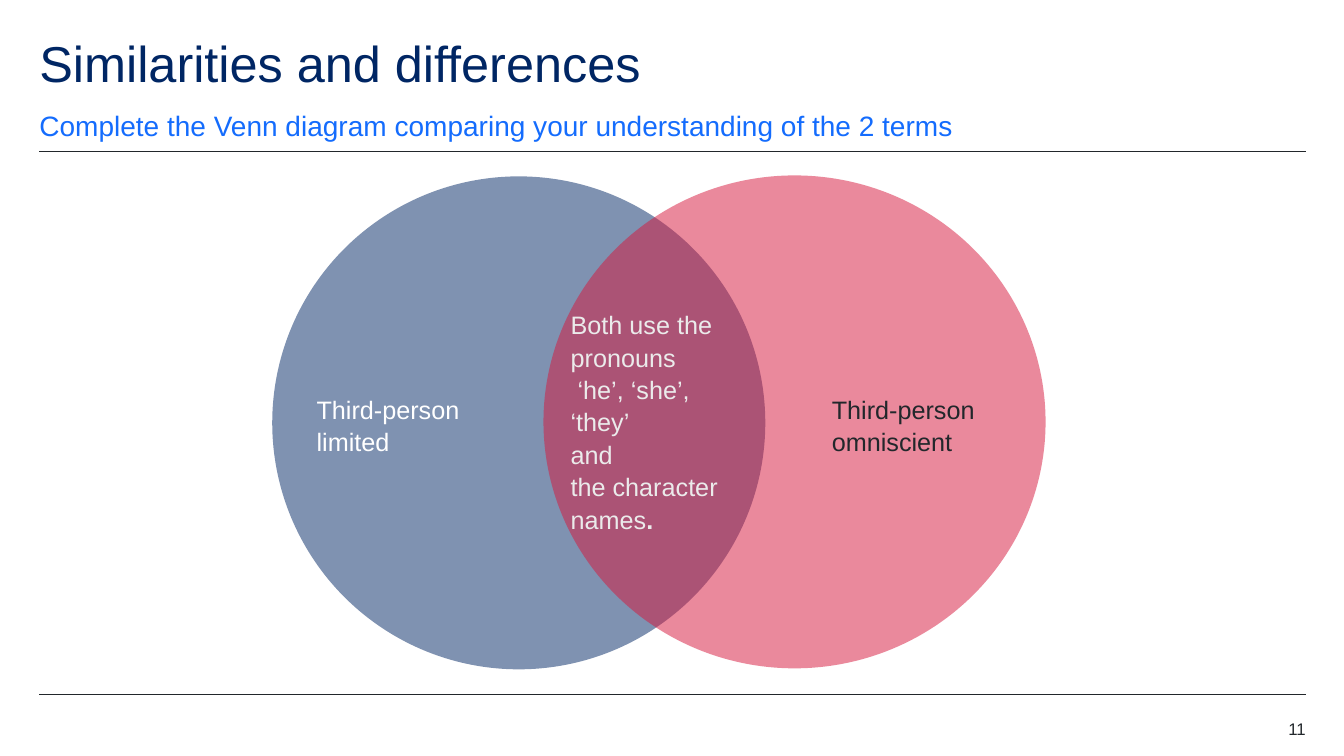
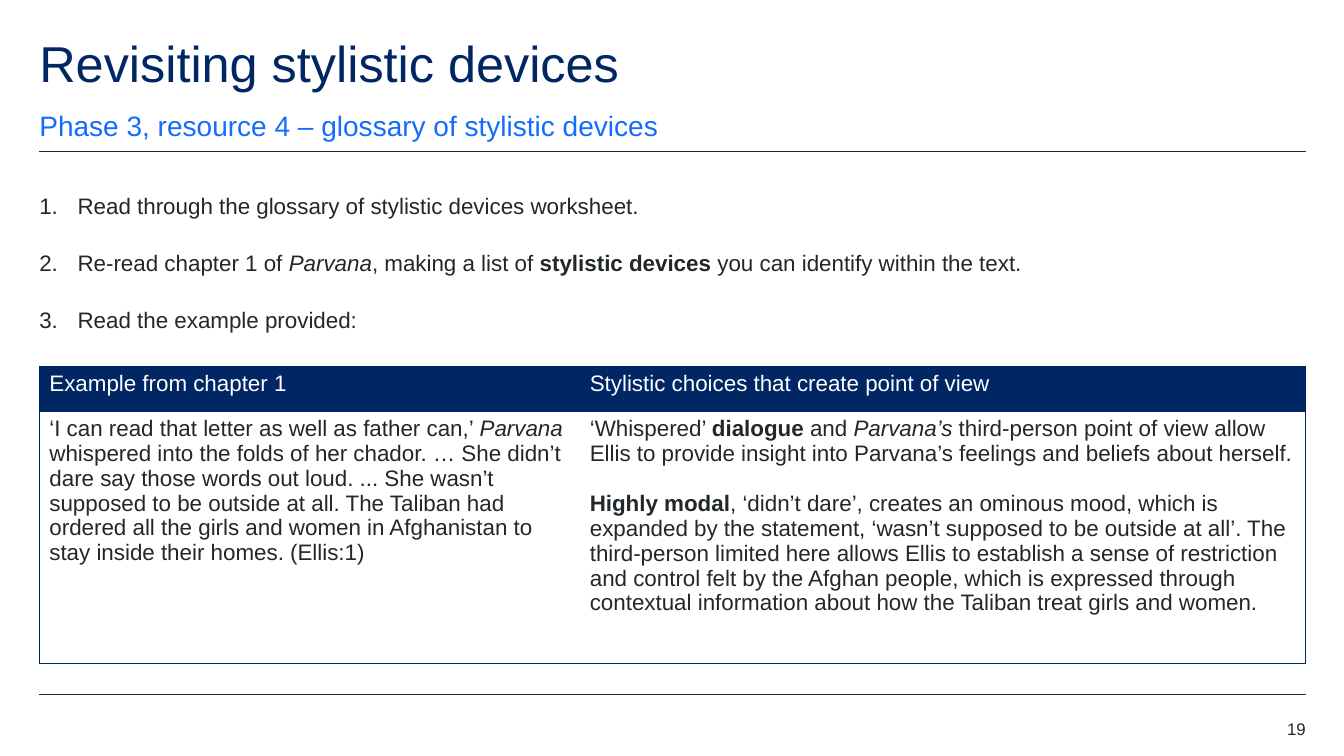
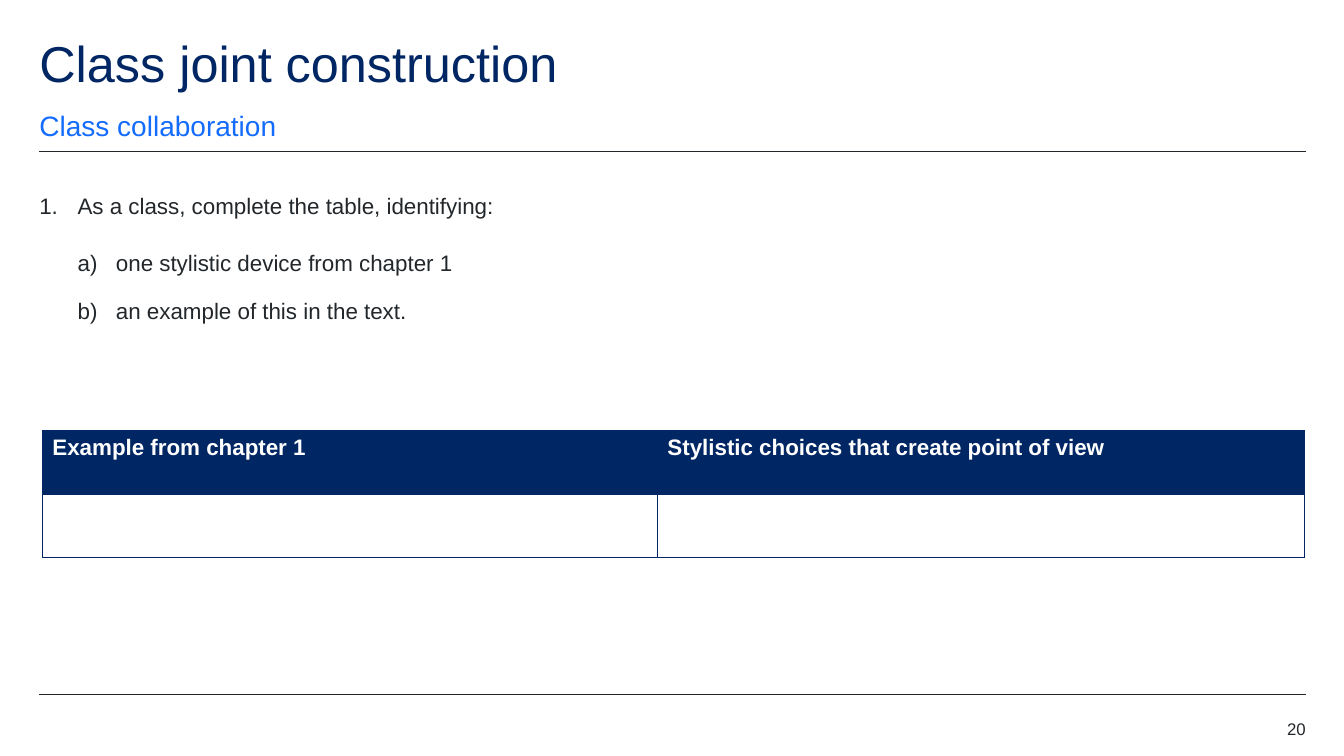
from lxml import etree
from pptx import Presentation
from pptx.dml.color import RGBColor
from pptx.enum.shapes import MSO_CONNECTOR, MSO_SHAPE
from pptx.enum.text import MSO_ANCHOR, PP_ALIGN
from pptx.oxml.ns import qn
from pptx.util import Inches, Pt

STRAIGHT = MSO_CONNECTOR.STRAIGHT
OVAL = MSO_SHAPE.OVAL
TOP, MIDDLE, BOTTOM = MSO_ANCHOR.TOP, MSO_ANCHOR.MIDDLE, MSO_ANCHOR.BOTTOM
RIGHT = PP_ALIGN.RIGHT

# Shared style
FONT = "Arial"
NAVY = RGBColor(0x00, 0x26, 0x64)
BLUE = RGBColor(0x14, 0x6C, 0xFD)
RED = RGBColor(0xD7, 0x15, 0x3A)
INK = RGBColor(0x22, 0x27, 0x2B)
PALE = RGBColor(0xEB, 0xEB, 0xEB)
WHITE = RGBColor(0xFF, 0xFF, 0xFF)

# Shared layout, in inches
MARGIN = 0.39
CONTENT_WIDTH = 12.56
RIGHT_EDGE = MARGIN + CONTENT_WIDTH
HEADING_WIDTH = 11.02
RULES = (1.5, 6.89)
LIST_TOP = 1.77
INDENT = 0.38
VENN_SPACING = 1.07
BORDER_TAGS = {"l": "a:lnL", "r": "a:lnR", "t": "a:lnT", "b": "a:lnB"}


def set_font(para, size, color, bold=None):
    font = para.font
    font.name, font.size, font.bold = FONT, Pt(size), bold
    font.color.rgb = color


def add_spans(para, spans):
    """Spans are a plain string, or (text, style) pairs with style "", "b" or "i"."""
    if isinstance(spans, str):
        spans = [(spans, "")]
    for text, style in spans:
        span = para.add_run()
        span.text = text
        if style == "b":
            span.font.bold = True
        elif style == "i":
            span.font.italic = True


def add_numbering(para, scheme, level):
    para.level = level
    properties = para._p.get_or_add_pPr()
    properties.set("marL", str(Inches(INDENT * (level + 1))))
    properties.set("indent", str(-Inches(INDENT)))
    etree.SubElement(properties, qn("a:buFont"), typeface="+mj-lt")
    etree.SubElement(properties, qn("a:buAutoNum"), type=scheme)


def add_text(page, place, paragraphs, size, color, anchor=TOP, align=None,
             spacing=None, wrap=True):
    box = page.shapes.add_textbox(*map(Inches, place))
    frame = box.text_frame
    frame.word_wrap, frame.vertical_anchor = wrap, anchor
    frame.margin_left = frame.margin_right = 0
    frame.margin_top = frame.margin_bottom = 0
    for index, spans in enumerate(paragraphs):
        para = frame.paragraphs[0] if index == 0 else frame.add_paragraph()
        para.alignment, para.line_spacing = align, spacing
        set_font(para, size, color)
        add_spans(para, spans)


def add_list(page, height, items):
    """Items are (level, spans): level 0 is 1. 2. 3., level 1 is a) b) c)."""
    box = page.shapes.add_textbox(*map(Inches, (MARGIN, LIST_TOP, CONTENT_WIDTH, height)))
    frame = box.text_frame
    frame.word_wrap = True
    frame.margin_left = frame.margin_right = 0
    frame.margin_top = frame.margin_bottom = 0
    for index, (level, spans) in enumerate(items):
        para = frame.paragraphs[0] if index == 0 else frame.add_paragraph()
        para.line_spacing = 1.5
        para.space_after = Pt((12, 6)[level])
        add_numbering(para, ("arabicPeriod", "alphaLcParenR")[level], level)
        set_font(para, 16, INK)
        add_spans(para, spans)


def add_rule(page, top):
    rule = page.shapes.add_connector(
        STRAIGHT, Inches(MARGIN), Inches(top), Inches(RIGHT_EDGE), Inches(top))
    rule.line.color.rgb, rule.line.width = INK, Pt(0.5)
    etree.SubElement(rule._element.spPr, qn("a:effectLst"))


def add_page(deck, title, subtitle, number):
    page = deck.slides.add_slide(deck.slide_layouts[6])
    for top in RULES:
        add_rule(page, top)
    add_text(page, (12.16, 7.13, 0.79, 0.2), [number], 12, INK, align=RIGHT)
    add_text(page, (MARGIN, 1.07, HEADING_WIDTH, 0.34), [subtitle], 20, BLUE,
             anchor=BOTTOM, spacing=1.5)
    add_text(page, (MARGIN, 0.39, HEADING_WIDTH, 0.6), [title], 36, NAVY, spacing=0.9)
    return page


def add_circle(page, place, color):
    circle = page.shapes.add_shape(OVAL, *map(Inches, place))
    circle.shadow.inherit = False
    circle.fill.solid()
    circle.fill.fore_color.rgb = color
    circle.line.fill.background()
    tint = circle._element.spPr.find(".//" + qn("a:srgbClr"))
    etree.SubElement(tint, qn("a:alpha"), val="50000")


def set_borders(cell, sides):
    """Draw the named sides and clear the others; borders go before the fill."""
    properties = cell._tc.get_or_add_tcPr()
    for index, (side, tag) in enumerate(BORDER_TAGS.items()):
        border = etree.Element(qn(tag), w=str(Pt(0.5)))
        if side in sides:
            paint = etree.SubElement(border, qn("a:solidFill"))
            etree.SubElement(paint, qn("a:srgbClr"), val=str(NAVY))
        else:
            etree.SubElement(border, qn("a:noFill"))
        properties.insert(index, border)


def add_table(page, left, top, widths, heights, rows, borders, bold_header=None):
    """Each cell is a list of paragraphs; borders holds the sides to draw per cell."""
    frame = page.shapes.add_table(
        len(rows), len(widths),
        *map(Inches, (left, top, sum(widths), sum(heights))))
    table = frame.table
    for column, width in zip(table.columns, widths):
        column.width = Inches(width)
    for row, height in zip(table.rows, heights):
        row.height = Inches(height)
    for r, row in enumerate(rows):
        header = r == 0
        for c, paragraphs in enumerate(row):
            cell = table.cell(r, c)
            if header:
                cell.fill.solid()
                cell.fill.fore_color.rgb = NAVY
            else:
                cell.fill.background()
            set_borders(cell, borders[r][c])
            for index, spans in enumerate(paragraphs):
                para = cell.text_frame.paragraphs[0] if index == 0 else cell.text_frame.add_paragraph()
                if index < len(paragraphs) - 1:
                    para.space_after = Pt(18)
                set_font(para, 16, WHITE if header else INK,
                         bold_header if header else False)
                add_spans(para, spans)


HEADER = [["Example from chapter 1"], ["Stylistic choices that create point of view"]]


def build_venn(deck):
    page = add_page(deck, "Similarities and differences",
                    "Complete the Venn diagram comparing your understanding of the 2 terms", "11")
    add_circle(page, (2.7, 1.75, 4.89, 4.89), NAVY)
    add_circle(page, (5.39, 1.74, 4.98, 4.89), RED)
    add_text(page, (8.25, 3.89, 1.95, 0.57), ["Third-person omniscient"], 18, INK,
             spacing=VENN_SPACING)
    add_text(page, (5.66, 3.19, 1.77, 1.97),
             ["Both use the", "pronouns", " ‘he’, ‘she’, ‘they’", "and", "the character",
              [("names", ""), (".", "b")]],
             18, PALE, anchor=MIDDLE, spacing=VENN_SPACING, wrap=False)
    add_text(page, (3.14, 3.89, 1.76, 0.57), ["Third-person limited"], 18, WHITE,
             spacing=VENN_SPACING)


def build_devices(deck):
    page = add_page(deck, "Revisiting stylistic devices",
                    "Phase 3, resource 4 – glossary of stylistic devices", "19")
    example = [[
        ("‘I can read that letter as well as father can,’ ", ""), ("Parvana", "i"),
        (" whispered into the folds of her chador. … She didn’t dare say those words out "
         "loud. ... She wasn’t supposed to be outside at all. The Taliban had ordered all "
         "the girls and women in Afghanistan to stay inside their homes. (Ellis:1)", "")]]
    choices = [
        [("‘Whispered’ ", ""), ("dialogue", "b"), (" and ", ""), ("Parvana’s", "i"),
         (" third-person point of view allow Ellis to provide insight into Parvana’s "
          "feelings and beliefs about herself.", "")],
        [("Highly modal", "b"),
         (", ‘didn’t dare’, creates an ominous mood, which is expanded by the statement, "
          "‘wasn’t supposed to be outside at all’. The third-person limited here allows "
          "Ellis to establish a sense of restriction and control felt by the Afghan people, "
          "which is expressed through contextual information about how the Taliban treat "
          "girls and women.", "")]]
    add_table(page, MARGIN, 3.63, (5.36, 7.2), (0.45, 2.5), [HEADER, [example, choices]],
              [("lt", "tr"), ("ltb", "trb")])
    add_list(page, 1.66, [
        (0, "Read through the glossary of stylistic devices worksheet."),
        (0, [("Re-read chapter 1 of ", ""), ("Parvana", "i"), (", making a list of ", ""),
             ("stylistic devices ", "b"), ("you can identify within the text.", "")]),
        (0, "Read the example provided:")])


def build_construction(deck):
    page = add_page(deck, "Class joint construction", "Class collaboration", "20")
    add_table(page, 0.42, 4.27, (6.1, 6.42), (0.63, 0.63), [HEADER, [[], []]],
              [("lt", "tr"), ("lrtb", "lrtb")], bold_header=True)
    add_list(page, 1.77, [
        (0, "As a class, complete the table, identifying:"),
        (1, "one stylistic device from chapter 1"),
        (1, "an example of this in the text.")])


def main():
    deck = Presentation()
    deck.slide_width, deck.slide_height = Inches(13.33), Inches(7.5)
    build_venn(deck)
    build_devices(deck)
    build_construction(deck)
    deck.save("out.pptx")


if __name__ == "__main__":
    main()
